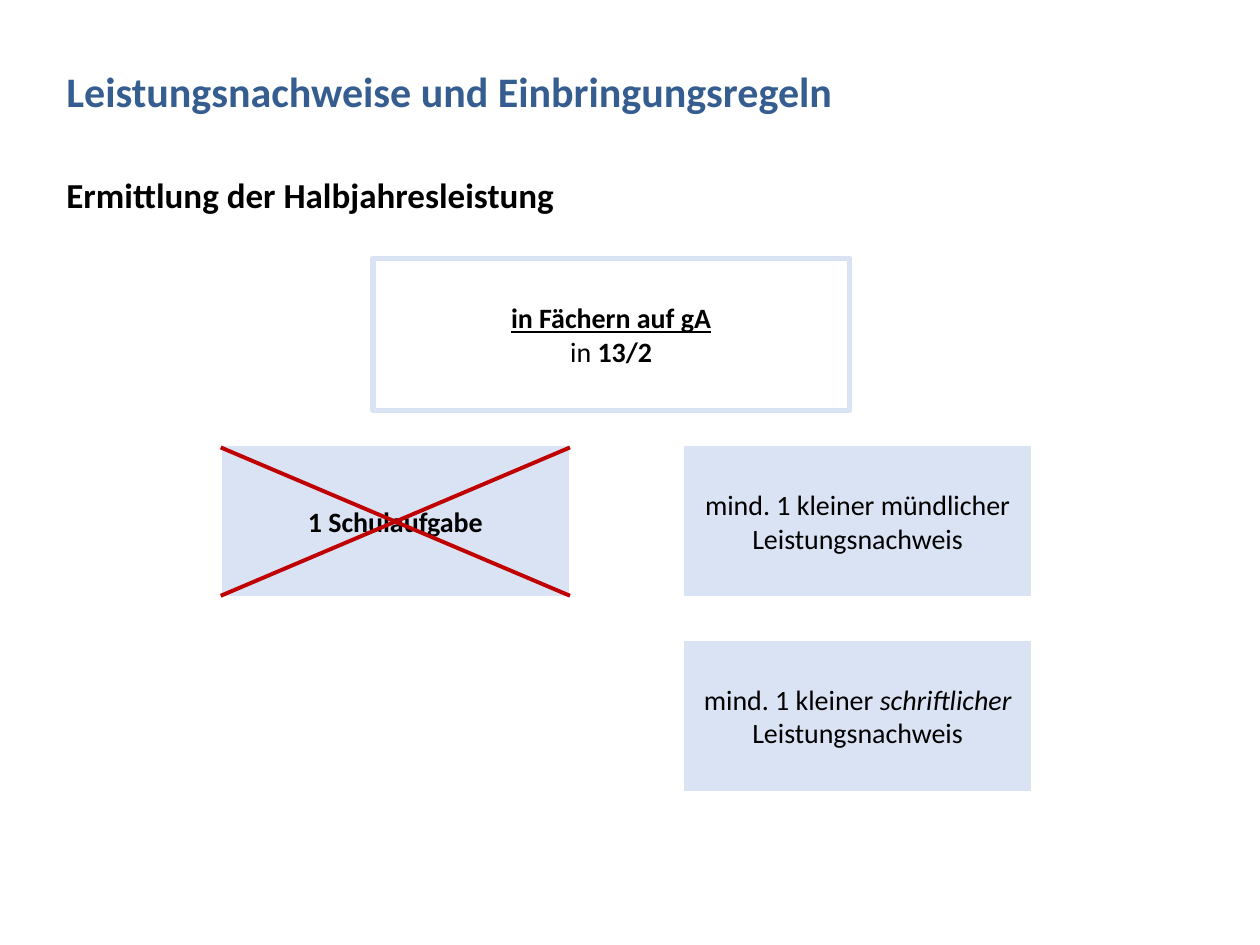
"""Build the slide on how the half-year grade is worked out."""
from typing import NamedTuple

import pptx
import pptx.dml.color
import pptx.enum.shapes
import pptx.enum.text
import pptx.util
from pptx.util import Cm


class Run(NamedTuple):
    text: str
    bold: bool = False
    slant: bool = False
    under: bool = False


class Head(NamedTuple):
    top: float
    wide: float
    high: float
    text: str
    size: int
    tint: str


class Box(NamedTuple):
    left: float
    top: float
    wide: float
    lines: list[list[Run]]
    fill: str = "DAE3F3"
    edge: str = "FFFFFF"
    weight: float = 1


MARGIN = 1.09
HIGH = 3.07
WIDE = 7.04
LEFT, RIGHT = 4.45, 13.77
UPPER, LOWER = 8.97, 12.9

HEADS = [
    Head(1.19, 23.8, 2.21, "Leistungsnachweise und Einbringungsregeln", 24, "355D90"),
    Head(3.38, 22.99, 1.12, "Ermittlung der Halbjahresleistung", 20, "000000"),
]
BOXES = [
    Box(RIGHT, LOWER, WIDE, [[Run("mind. 1 kleiner "), Run("schriftlicher", slant=True),
                              Run(" Leistungsnachweis")]]),
    Box(RIGHT, UPPER, WIDE, [[Run("mind. 1 kleiner mündlicher Leistungsnachweis")]]),
    Box(7.52, 5.21, 9.6, [[Run("in Fächern auf gA", bold=True, under=True)],
                          [Run("in "), Run("13/2", bold=True)]], "FFFFFF", "DAE3F3", 3),
    Box(LEFT, UPPER, WIDE, [[Run("1 Schulaufgabe", bold=True)]]),
]


def paint(form, tint: str) -> None:
    """Set a fill, line or font colour from a hex string."""
    if hasattr(form, "solid"):
        form.solid()
        form = form.fore_color
    else:
        form = form.color
    form.rgb = pptx.dml.color.RGBColor.from_string(tint)


def write(para, run: Run, size: int, tint: str = "000000") -> None:
    """Add one styled run to a paragraph."""
    part = para.add_run()
    part.text = run.text
    font = part.font
    font.name, font.size = "Calibri", pptx.util.Pt(size)
    font.bold, font.italic, font.underline = run.bold, run.slant, run.under
    paint(font, tint)


def title(slide, head: Head) -> None:
    """Draw one bold heading."""
    frame = slide.shapes.add_textbox(
        Cm(MARGIN), Cm(head.top), Cm(head.wide), Cm(head.high)).text_frame
    frame.word_wrap = True
    write(frame.paragraphs[0], Run(head.text, bold=True), head.size, head.tint)


def panel(slide, box: Box) -> None:
    """Draw one box with centred text."""
    shape = slide.shapes.add_shape(
        pptx.enum.shapes.MSO_SHAPE.RECTANGLE,
        Cm(box.left), Cm(box.top), Cm(box.wide), Cm(HIGH))
    shape.shadow.inherit = False
    paint(shape.fill, box.fill)
    paint(shape.line, box.edge)
    shape.line.width = pptx.util.Pt(box.weight)
    frame = shape.text_frame
    frame.word_wrap = True
    frame.vertical_anchor = pptx.enum.text.MSO_ANCHOR.MIDDLE
    for i, line in enumerate(box.lines):
        para = frame.add_paragraph() if i else frame.paragraphs[0]
        para.alignment = pptx.enum.text.PP_ALIGN.CENTER
        for run in line:
            write(para, run, 16)


def cross(slide, left: float, top: float, wide: float, high: float) -> None:
    """Strike out an area with two red diagonals."""
    ends = (top, top + high)
    for start, stop in (ends, ends[::-1]):
        line = slide.shapes.add_connector(
            pptx.enum.shapes.MSO_CONNECTOR.STRAIGHT,
            Cm(left), Cm(start), Cm(left + wide), Cm(stop))
        paint(line.line, "C00000")
        line.line.width = pptx.util.Pt(2.25)
        props = line._element.spPr
        props.append(props.makeelement(pptx.oxml.ns.qn("a:effectLst"), {}))


def main() -> None:
    """Build and save the slide."""
    deck = pptx.Presentation()
    deck.slide_width, deck.slide_height = Cm(25.4), Cm(19.05)
    slide = deck.slides.add_slide(deck.slide_layouts[6])
    for head in HEADS:
        title(slide, head)
    for box in BOXES:
        panel(slide, box)
    cross(slide, LEFT, UPPER + 0.05, WIDE, HIGH - 0.08)
    deck.save("out.pptx")


if __name__ == "__main__":
    main()
